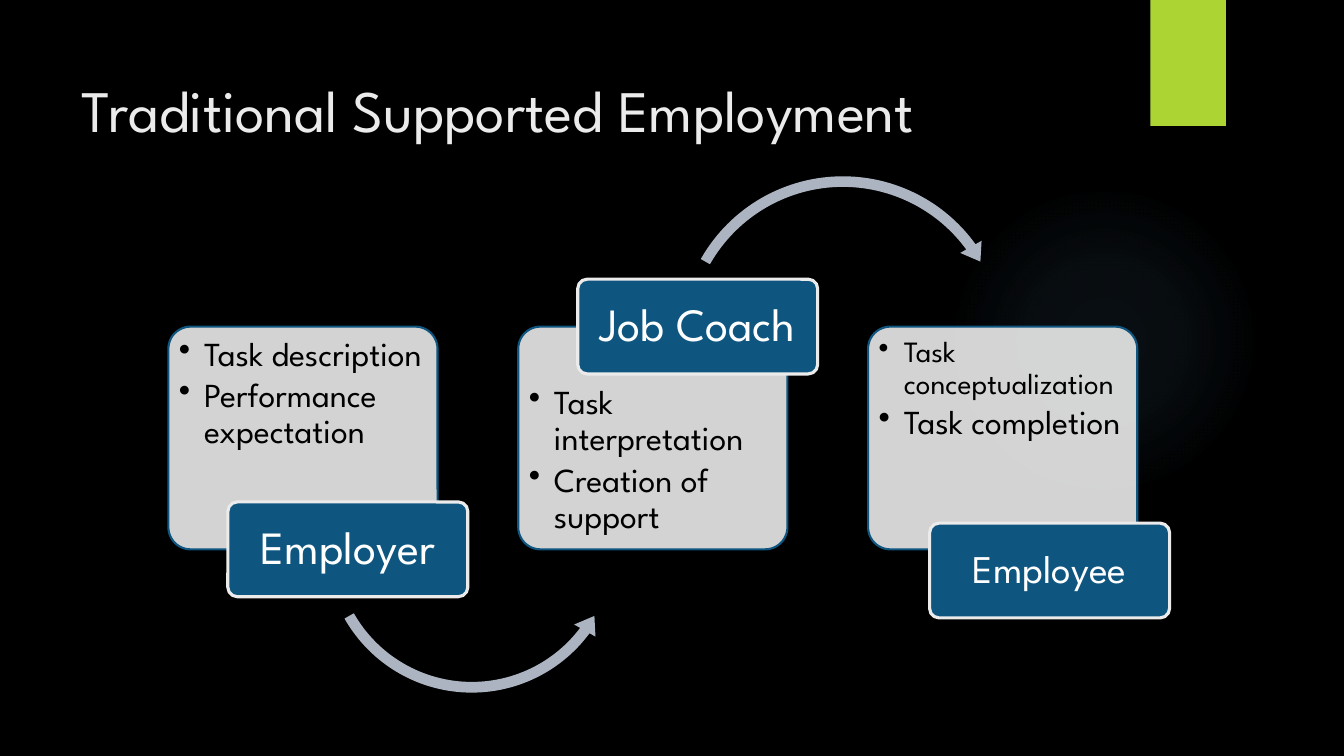
from lxml import etree
from pptx import Presentation
from pptx.dml.color import RGBColor
from pptx.enum.shapes import MSO_SHAPE
from pptx.enum.text import MSO_ANCHOR, PP_ALIGN
from pptx.oxml import parse_xml
from pptx.oxml.ns import qn
from pptx.util import Inches, Pt

RECT = MSO_SHAPE.RECTANGLE
ROUND = MSO_SHAPE.ROUNDED_RECTANGLE
OVAL = MSO_SHAPE.OVAL
ARC = MSO_SHAPE.CIRCULAR_ARROW
LEFT_ARC = MSO_SHAPE.LEFT_CIRCULAR_ARROW
TOP, MIDDLE = MSO_ANCHOR.TOP, MSO_ANCHOR.MIDDLE
LEFT, CENTER = PP_ALIGN.LEFT, PP_ALIGN.CENTER

FACE = "League Spartan"
BLACK, WHITE, PALE = "000000", "FFFFFF", "EBEBEB"
BLUE, GREEN, GREY, GLOW = "0E5580", "ACD433", "ABB4C0", "7AC4F0"
NS = "http://schemas.openxmlformats.org/drawingml/2006/main"

CARD_LEFT, CARD_STEP, CARD_TOP = 1.67, 3.47, 3.24

# bullets with sizes, top inset, label, label size, label left and top
STEPS = [
    ([("Task description", 24), ("Performance expectation", 24)], 0.04,
     "Employer", 33, 2.26, 4.98),
    ([("Task interpretation", 24), ("Creation of support", 24)], 0.52,
     "Job Coach", 33, 5.73, 2.77),
    ([("Task conceptualization", 21), ("Task completion", 24)], 0.04,
     "Employee", 28, 9.22, 5.19),
]


def color(code):
    return RGBColor.from_string(code)


def add_shape(slide, kind, box, fill, line=None, width=0, adjust=()):
    shape = slide.shapes.add_shape(kind, *map(Inches, box))
    shape.shadow.inherit = False
    shape.fill.solid()
    shape.fill.fore_color.rgb = color(fill)
    if line:
        shape.line.color.rgb = color(line)
        shape.line.width = Pt(width)
    else:
        shape.line.fill.background()
    for i, value in enumerate(adjust):
        shape.adjustments[i] = value
    return shape


def set_frame(shape, anchor, side, top, bottom):
    frame = shape.text_frame
    frame.word_wrap = True
    frame.vertical_anchor = anchor
    frame.margin_left = frame.margin_right = Inches(side)
    frame.margin_top, frame.margin_bottom = Inches(top), Inches(bottom)
    return frame


def set_text(para, text, size, ink, align=LEFT):
    para.text = text
    para.alignment = align
    para.line_spacing = 0.9
    font = para.runs[0].font
    font.name, font.size = FACE, Pt(size)
    font.color.rgb = color(ink)


def add_bullet(para):
    props = para._p.get_or_add_pPr()
    props.set("marL", str(Inches(0.25)))
    props.set("indent", str(-Inches(0.25)))
    etree.SubElement(props, qn("a:buChar")).set("char", "•")


def add_glow(slide):
    """Add a circle that fades out from its centre."""
    shape = add_shape(slide, OVAL, (9.41, 1.83, 3.08, 3.08), GLOW)
    stops = "".join(
        f'<a:gs pos="{pos}000"><a:srgbClr val="{GLOW}">'
        f'<a:alpha val="{alpha}000"/></a:srgbClr></a:gs>'
        for pos, alpha in [(0, 7), (36, 6), (69, 0), (100, 0)])
    grad = parse_xml(
        f'<a:gradFill xmlns:a="{NS}"><a:gsLst>{stops}</a:gsLst>'
        '<a:path path="circle"><a:fillToRect l="50000" t="50000" '
        'r="50000" b="50000"/></a:path></a:gradFill>')
    props = shape._element.spPr
    props.replace(props.find(qn("a:solidFill")), grad)


def add_title(slide, text):
    box = slide.shapes.add_textbox(*map(Inches, (0.71, 0.5, 10.29, 1.53)))
    frame = set_frame(box, TOP, 0.1, 0.23, 0.05)
    set_text(frame.paragraphs[0], text, 42, PALE)
    frame.paragraphs[0].line_spacing = 1.0


def add_card(slide, left, items, inset):
    box = left, CARD_TOP, 2.67, 2.21
    card = add_shape(slide, ROUND, box, PALE, BLUE, 1.5, [0.1])
    tint = card._element.spPr.find(qn("a:solidFill"))[0]
    etree.SubElement(tint, qn("a:alpha")).set("val", "90000")
    frame = set_frame(card, TOP, 0.04, inset, 0.04)
    for i, (text, size) in enumerate(items):
        para = frame.add_paragraph() if i else frame.paragraphs[0]
        para.space_after = Pt(3.6)
        add_bullet(para)
        set_text(para, text, size, BLACK)


def add_label(slide, left, top, text, size):
    box = left, top, 2.38, 0.94
    label = add_shape(slide, ROUND, box, BLUE, PALE, 2.25, [0.1])
    frame = set_frame(label, MIDDLE, 0.07, 0.05, 0.05)
    set_text(frame.paragraphs[0], text, size, WHITE, CENTER)


def main():
    deck = Presentation()
    deck.slide_width, deck.slide_height = Inches(13.33), Inches(7.5)
    slide = deck.slides.add_slide(deck.slide_layouts[6])
    slide.background.fill.solid()
    slide.background.fill.fore_color.rgb = color(BLACK)

    add_glow(slide)
    add_shape(slide, RECT, (11.41, 0, 0.75, 1.25), GREEN)
    add_title(slide, "Traditional Supported Employment")
    for i, (items, inset, name, size, left, top) in enumerate(STEPS):
        add_card(slide, CARD_LEFT + i * CARD_STEP, items, inset)
        add_label(slide, left, top, name, size)
    add_shape(slide, LEFT_ARC, (3.16, 3.9, 3.04, 3.04), GREY,
              adjust=[0.035, 4.277, 22.032, 90.245, 0.04])
    add_shape(slide, ARC, (6.67, 1.68, 3.38, 3.38), GREY,
              adjust=[0.031, 3.813, 194.431, 125.755, 0.036])
    deck.save("out.pptx")


if __name__ == "__main__":
    main()
